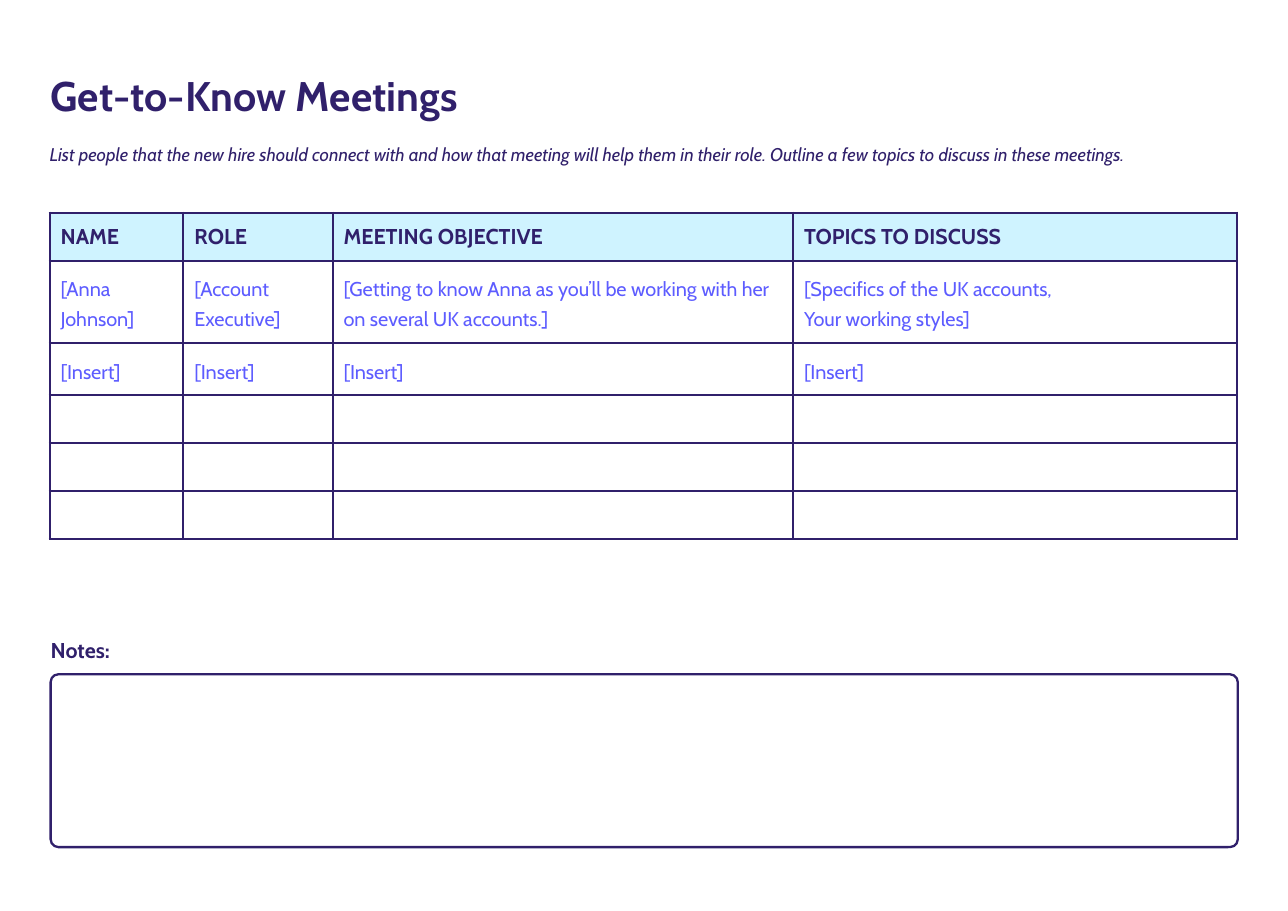
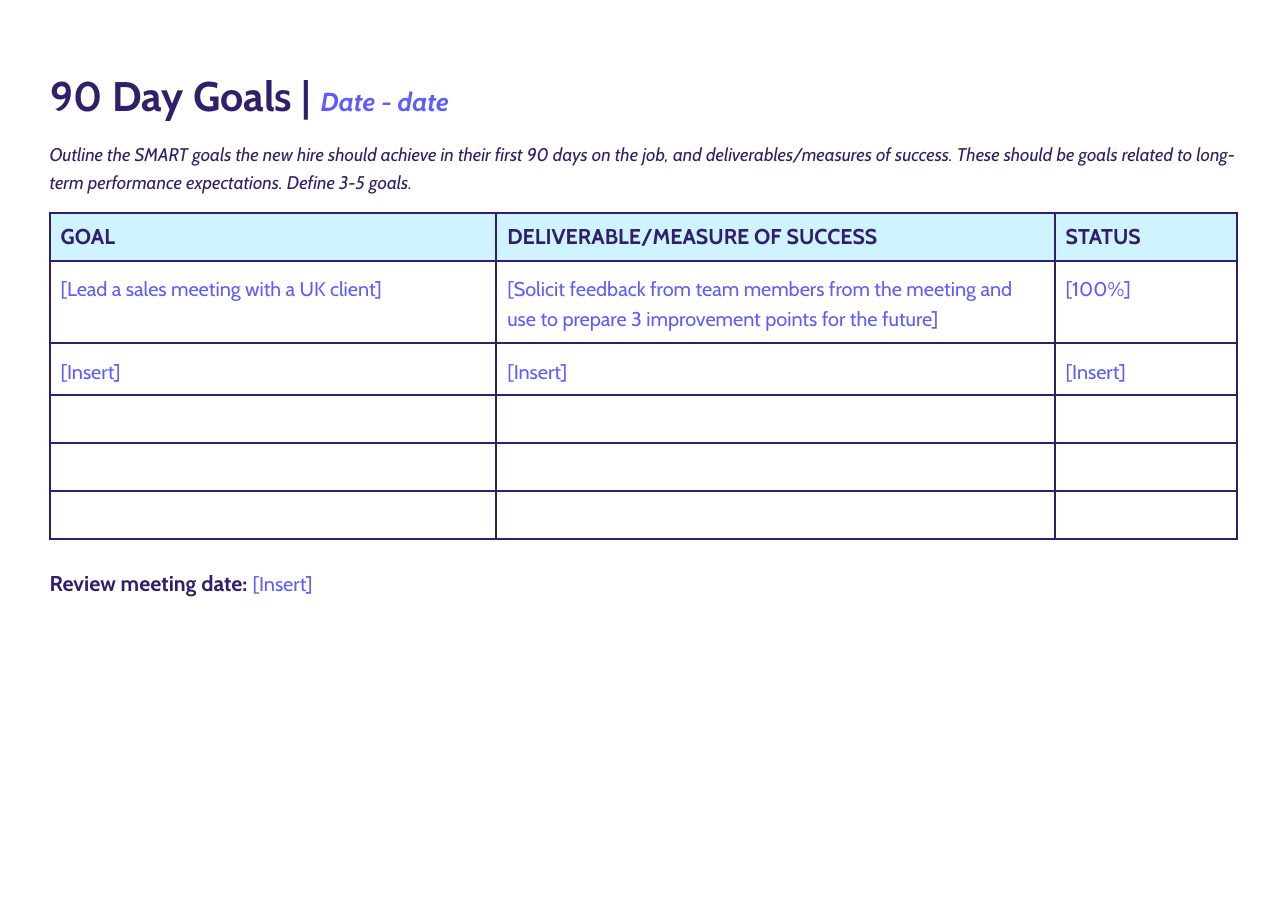
"""Build two onboarding worksheet slides: meetings and 90 day goals."""
from dataclasses import dataclass

from lxml import etree
from pptx import Presentation
from pptx.dml.color import RGBColor
from pptx.enum.shapes import MSO_SHAPE
from pptx.enum.text import MSO_ANCHOR
from pptx.oxml.ns import qn
from pptx.util import Pt

ROUNDED = MSO_SHAPE.ROUNDED_RECTANGLE
TOP = MSO_ANCHOR.TOP


@dataclass(frozen=True)
class Style:
    """Size, colour and emphasis of a span of text."""

    size: float
    color: str
    bold: bool = False
    italic: bool = False


class Theme:
    """Colours, type styles and measures shared by the slides."""

    font = "Cabin"
    ink, accent, header, paper = "30206B", "5D5CFF", "CFF3FF", "FFFFFF"
    title = Style(27, ink, bold=True)
    title_date = Style(17, accent, bold=True, italic=True)
    intro = Style(12, ink, italic=True)
    heading = Style(14, ink, bold=True)
    entry = Style(13, accent)
    page_width, page_height = 841.89, 595.28
    left, text_left, width = 32.4, 33.12, 776
    table_top = 139
    cell_inset = 7.2
    line = 1.5
    row, example_row, insert_row = 31.4, 53.8, 34.1
    empty_rows = 3


def format_run(run, style):
    """Apply a style to one run."""
    run.font.name = Theme.font
    run.font.size = Pt(style.size)
    run.font.bold = style.bold
    run.font.italic = style.italic
    run.font.color.rgb = RGBColor.from_string(style.color)


def size_marks(para, style):
    """Size line breaks and the paragraph end like the text around them."""
    size = str(int(style.size * 100))
    for line_break in para._p.findall(qn("a:br")):
        etree.SubElement(line_break, qn("a:rPr"), sz=size)
    etree.SubElement(para._p, qn("a:endParaRPr"), sz=size)


def add_text(page, left, top, width, height, spans, spacing):
    """Add a text box without insets, holding one paragraph of styled spans."""
    box = page.shapes.add_textbox(Pt(left), Pt(top), Pt(width), Pt(height))
    frame = box.text_frame
    frame.word_wrap = True
    frame.vertical_anchor = TOP
    frame.margin_left = frame.margin_right = 0
    frame.margin_top = frame.margin_bottom = 0
    para = frame.paragraphs[0]
    para.line_spacing = spacing
    for text, style in spans:
        span = para.add_run()
        span.text = text
        format_run(span, style)


def set_borders(cell):
    """Draw the four borders of a cell."""
    properties = cell._tc.get_or_add_tcPr()
    for side in ("lnL", "lnR", "lnT", "lnB"):
        border = etree.SubElement(
            properties, qn(f"a:{side}"), w=str(Pt(Theme.line)))
        fill = etree.SubElement(border, qn("a:solidFill"))
        etree.SubElement(fill, qn("a:srgbClr"), val=Theme.ink)


def fill_cell(cell, text, is_header):
    """Set the text, insets, borders and fill of a cell."""
    inset = Pt(Theme.cell_inset)
    cell.margin_left = cell.margin_right = inset
    cell.margin_top = cell.margin_bottom = inset
    cell.vertical_anchor = TOP
    set_borders(cell)
    if is_header:
        cell.fill.solid()
        cell.fill.fore_color.rgb = RGBColor.from_string(Theme.header)
    else:
        cell.fill.background()
    style = Theme.heading if is_header or not text else Theme.entry
    para = cell.text_frame.paragraphs[0]
    para.text = text
    if text and not is_header:
        para.line_spacing = 1.25
    for run in para.runs:
        format_run(run, style)
    size_marks(para, style)


def add_worksheet(page, widths, headers, examples):
    """Add a table with a header, an example, an insert row and empty rows."""
    count = len(headers)
    rows = [headers, examples, ["[Insert]"] * count]
    rows += [[""] * count] * Theme.empty_rows
    heights = [Theme.row, Theme.example_row, Theme.insert_row]
    heights += [Theme.row] * Theme.empty_rows
    table = page.shapes.add_table(
        len(rows), count, Pt(Theme.left), Pt(Theme.table_top),
        Pt(sum(widths)), Pt(sum(heights))).table
    table.first_row = table.horz_banding = False
    for column, width in zip(table.columns, widths):
        column.width = Pt(width)
    for index, (row, height, texts) in enumerate(
            zip(table.rows, heights, rows)):
        row.height = Pt(height)
        for cell, text in zip(row.cells, texts):
            fill_cell(cell, text, index == 0)


def add_page(deck, title_spans, intro):
    """Add a blank page with a title and an introduction."""
    page = deck.slides.add_slide(deck.slide_layouts[6])
    add_text(page, Theme.text_left, 41, 655, 40, title_spans, 1.15)
    add_text(page, Theme.left, 90, Theme.width, 51,
             [(intro, Theme.intro)], 1.25)
    return page


def add_notes_area(page):
    """Add the label and the rounded frame for handwritten notes."""
    frame = page.shapes.add_shape(
        ROUNDED, Pt(Theme.text_left), Pt(440.6), Pt(Theme.width), Pt(113))
    frame.adjustments[0] = 0.046
    frame.shadow.inherit = False
    frame.fill.solid()
    frame.fill.fore_color.rgb = RGBColor.from_string(Theme.paper)
    frame.line.color.rgb = RGBColor.from_string(Theme.ink)
    frame.line.width = Pt(Theme.line)
    add_text(page, Theme.text_left, 414, 120, 17,
             [("Notes:", Theme.heading)], 1.14)


def build_meetings(deck):
    """Build the page that lists meetings."""
    page = add_page(
        deck, [("Get-to-Know Meetings", Theme.title)],
        "List people that the new hire should connect with and how that "
        "meeting will help them in their role. Outline a few topics to "
        "discuss in these meetings.")
    add_notes_area(page)
    add_worksheet(
        page, [87.5, 97.5, 301, 290],
        ["NAME", "ROLE", "MEETING OBJECTIVE", "TOPICS TO DISCUSS"],
        ["[Anna Johnson]", "[Account Executive]",
         "[Getting to know Anna as you’ll be working with her on several "
         "UK accounts.]",
         "[Specifics of the UK accounts,\nYour working styles]"])


def build_goals(deck):
    """Build the page that lists the 90 day goals."""
    page = add_page(
        deck,
        [("90 Day Goals | ", Theme.title), ("Date - date", Theme.title_date)],
        "Outline the SMART goals the new hire should achieve in their first "
        "90 days on the job, and deliverables/measures of success. These "
        "should be goals related to long-term performance expectations. "
        "Define 3-5 goals.")
    add_worksheet(
        page, [292, 365, 119],
        ["GOAL", "DELIVERABLE/MEASURE OF SUCCESS", "STATUS"],
        ["[Lead a sales meeting with a UK client]",
         "[Solicit feedback from team members from the meeting and use to "
         "prepare 3 improvement points for the future]",
         "[100%]"])
    add_text(page, Theme.left, 370, 227, 17,
             [("Review meeting date: ", Theme.heading),
              ("[Insert]", Theme.entry)], 1.14)


def main():
    """Build and save the deck."""
    deck = Presentation()
    deck.slide_width = Pt(Theme.page_width)
    deck.slide_height = Pt(Theme.page_height)
    build_meetings(deck)
    build_goals(deck)
    deck.save("out.pptx")


if __name__ == "__main__":
    main()
